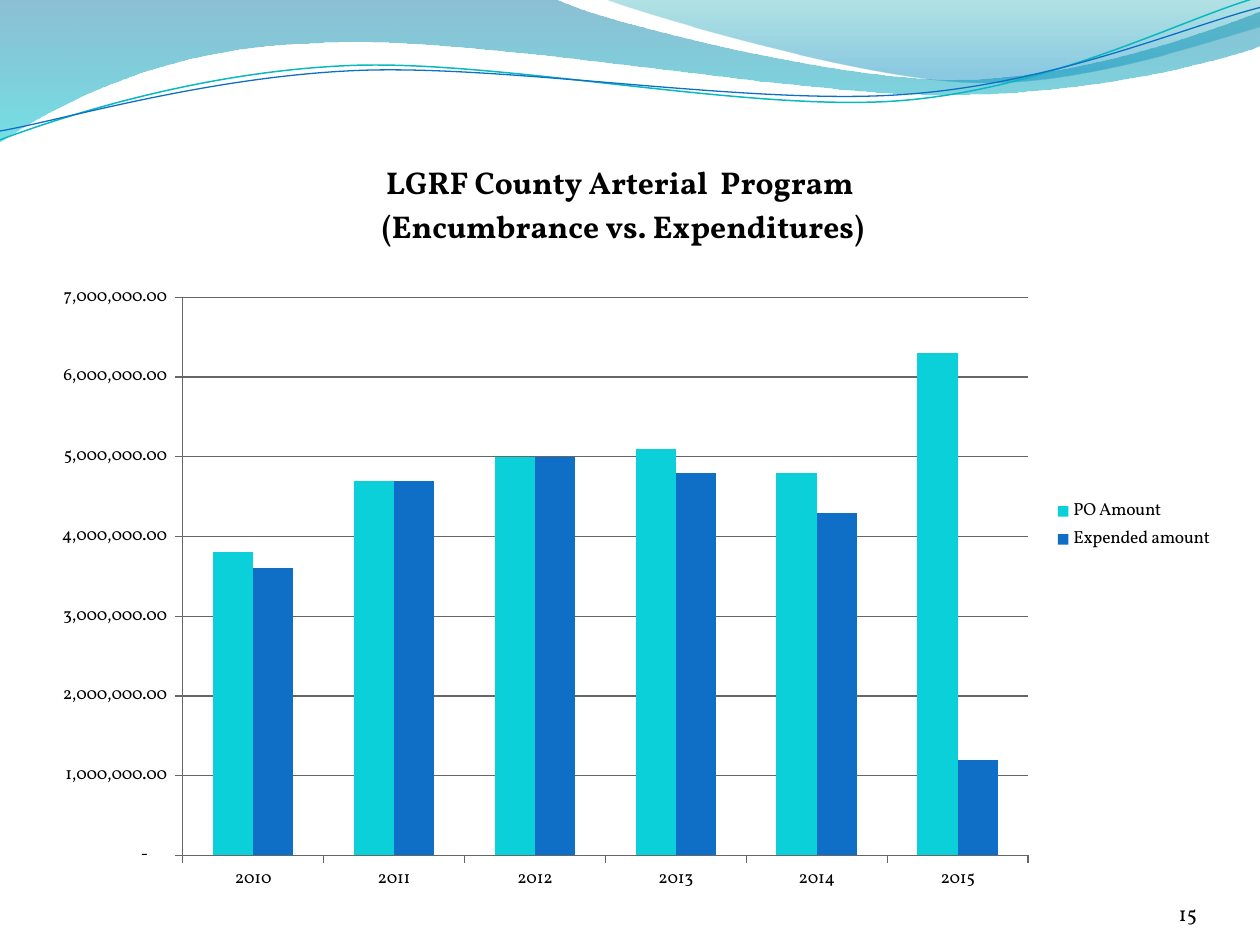
from dataclasses import dataclass
from math import cos, radians, sin

from lxml.etree import SubElement
from pptx import Presentation
from pptx.chart.data import CategoryChartData
from pptx.dml.color import RGBColor
from pptx.enum.chart import XL_CHART_TYPE, XL_LEGEND_POSITION, XL_TICK_MARK
from pptx.enum.text import MSO_ANCHOR, PP_ALIGN
from pptx.oxml import parse_xml
from pptx.oxml.ns import nsdecls, qn
from pptx.util import Cm, Pt

Point = tuple[float, float]
CM_PER_INCH = 2.54


@dataclass(frozen=True)
class Theme:
    font: str = "Vollkorn"
    ink: str = "000000"
    axis: str = "666666"
    aqua: str = "0BD0D9"
    blue: str = "0F6FC6"
    teal: str = "0AB8BF"
    label_size: float = 10
    number_size: float = 12
    title_size: float = 18


@dataclass(frozen=True)
class GradientStop:
    position: float
    color: str
    opacity: int


@dataclass(frozen=True)
class Ribbon:
    start: Point
    segments: tuple[tuple[Point, ...], ...]
    stops: tuple[GradientStop, ...]


@dataclass(frozen=True)
class Strand:
    start: Point
    segments: tuple[tuple[Point, ...], ...]
    center: Point
    color: str
    width: float
    tilt: float = -2.7


@dataclass(frozen=True)
class Region:
    x: float
    y: float
    w: float = 0
    h: float = 0


THEME = Theme()
RIBBONS = (
    Ribbon(
        (0, 0),
        (
            ((4.4, -0.01),),
            ((4.76, 0.17), (6.64, 0.63), (7.58, 0.63)),
            ((8.53, 0.63), (9.58, 0.26), (10, 0.09)),
            ((10.01, 0.36),),
            ((9.83, 0.44), (8.7, 0.76), (7.46, 0.75)),
            ((6.22, 0.75), (3.82, 0.28), (2.57, 0.34)),
            ((1.29, 0.36), (0.46, 0.83), (-0.01, 1.13)),
        ),
        (GradientStop(0, "0074A1", 45), GradientStop(1, "00C6CF", 55)),
    ),
    Ribbon(
        (4.79, -0.01),
        (
            ((5.09, 0.11), (6.82, 0.62), (7.69, 0.65)),
            ((8.56, 0.69), (9.61, 0.32), (10, 0.21)),
            ((10, 0),),
        ),
        (GradientStop(0, "00A1A9", 30), GradientStop(0.8, "008BBF", 45)),
    ),
)
STRANDS = (
    Strand(
        (0, 1.11),
        (
            ((0.48, 0.93), (1.58, 0.57), (2.77, 0.52)),
            ((3.95, 0.47), (5.93, 0.89), (7.13, 0.8)),
            ((8.33, 0.71), (9.38, 0.15), (9.98, -0.02)),
        ),
        (4.99, 0.57),
        THEME.teal,
        0.85,
    ),
    Strand(
        (0, 1.04),
        (
            ((0.47, 0.96), (1.64, 0.61), (2.83, 0.56)),
            ((4.03, 0.51), (5.97, 0.84), (7.17, 0.75)),
            ((8.36, 0.67), (9.41, 0.21), (10, 0.06)),
        ),
        (5, 0.59),
        THEME.blue,
        0.75,
    ),
)
CHART_AREA = Region(0.27, 1.17, 9.45, 6.03)
YEARS = ("2010", "2011", "2012", "2013", "2014", "2015")
AMOUNTS = {
    "PO Amount": (3800000, 4700000, 5000000, 5100000, 4800000, 6300000),
    "Expended amount": (3600000, 4700000, 5000000, 4800000, 4300000, 1200000),
}
AMOUNT_FORMAT = '_(* #,##0.00_);_(* \\(#,##0.00\\);_(* "-"??_);_(@_)'


def inch_cm(value: float) -> Cm:
    return Cm(value * CM_PER_INCH)


def turn(point: Point, center: Point, degrees: float) -> Point:
    angle = radians(degrees)
    dx, dy = point[0] - center[0], point[1] - center[1]
    return (
        center[0] + dx * cos(angle) - dy * sin(angle),
        center[1] + dx * sin(angle) + dy * cos(angle),
    )


def draw_curve(shapes, start: Point, segments, close: bool):
    points = [tuple(map(inch_cm, point)) for segment in segments for point in segment]
    builder = shapes.build_freeform(*map(inch_cm, start))
    builder.add_line_segments(points, close=close)
    curve = builder.convert_to_shape()
    curve.shadow.inherit = False
    steps = iter(list(curve._element.iter(qn("a:lnTo"))))
    for segment in segments:
        group = [next(steps) for _ in segment]
        if len(group) == 3:
            group[0].tag = qn("a:cubicBezTo")
            for step in group[1:]:
                group[0].append(step[0])
                step.getparent().remove(step)
    return curve


def draw_ribbon(slide, ribbon: Ribbon) -> None:
    band = draw_curve(slide.shapes, ribbon.start, ribbon.segments, close=True)
    band.line.fill.background()
    band.fill.gradient()
    band.fill.gradient_angle = 270
    for target, stop in zip(band.fill.gradient_stops, ribbon.stops):
        target.position = stop.position
        target.color.rgb = RGBColor.from_string(stop.color)
    for color, stop in zip(band._element.spPr.iter(qn("a:srgbClr")), ribbon.stops):
        SubElement(color, qn("a:alpha"), val=str(stop.opacity * 1000))


def draw_strand(group, strand: Strand) -> None:
    def level(point: Point) -> Point:
        return turn(point, strand.center, -strand.tilt)

    segments = [tuple(map(level, segment)) for segment in strand.segments]
    thread = draw_curve(group.shapes, level(strand.start), segments, close=False)
    thread.rotation = strand.tilt
    thread.fill.background()
    thread.line.color.rgb = RGBColor.from_string(strand.color)
    thread.line.width = Pt(strand.width)


def style_font(font, size: float, bold: bool = False) -> None:
    font.name = THEME.font
    font.size = Pt(size)
    font.bold = bold
    font.color.rgb = RGBColor.from_string(THEME.ink)


def place(element, region: Region, inner: bool = False) -> None:
    for old in element.findall(qn("c:layout")):
        element.remove(old)
    settings = {"layoutTarget": "inner"} if inner else {}
    settings |= {"xMode": "edge", "yMode": "edge"}
    settings["x"] = (region.x - CHART_AREA.x) / CHART_AREA.w
    settings["y"] = (region.y - CHART_AREA.y) / CHART_AREA.h
    if region.w:
        settings |= {"w": region.w / CHART_AREA.w, "h": region.h / CHART_AREA.h}
    body = "".join(f'<c:{name} val="{value}"/>' for name, value in settings.items())
    layout = parse_xml(
        f'<c:layout {nsdecls("c")}><c:manualLayout>{body}</c:manualLayout></c:layout>'
    )
    leading = ("c:tx", "c:legendPos")
    element.insert(sum(len(element.findall(qn(tag))) for tag in leading), layout)


def style_line(line) -> None:
    line.color.rgb = RGBColor.from_string(THEME.axis)
    line.width = Pt(0.75)


def draw_chart(slide) -> None:
    data = CategoryChartData(number_format=AMOUNT_FORMAT)
    data.categories = YEARS
    for name, values in AMOUNTS.items():
        data.add_series(name, values)
    area = map(inch_cm, (CHART_AREA.x, CHART_AREA.y, CHART_AREA.w, CHART_AREA.h))
    chart = slide.shapes.add_chart(XL_CHART_TYPE.COLUMN_CLUSTERED, *area, data).chart
    style_font(chart.font, THEME.label_size)

    heading = chart.chart_title
    heading.text_frame.text = "LGRF County Arterial  Program \n(Encumbrance vs. Expenditures)"
    for paragraph in heading.text_frame.paragraphs:
        style_font(paragraph.runs[0].font, THEME.title_size, bold=True)
    heading.include_in_layout = False
    place(heading._element, Region(3, 1.25))

    columns = chart.plots[0]
    columns.gap_width = 150
    columns.overlap = 0
    columns.vary_by_categories = False
    for series, color in zip(columns.series, (THEME.aqua, THEME.blue)):
        series.format.fill.solid()
        series.format.fill.fore_color.rgb = RGBColor.from_string(color)
    place(chart._chartSpace.chart.plotArea, Region(1.45, 2.36, 6.71, 4.43), inner=True)

    for axis in (chart.category_axis, chart.value_axis):
        axis.major_tick_mark = XL_TICK_MARK.OUTSIDE
        axis.minor_tick_mark = XL_TICK_MARK.NONE
        style_line(axis.format.line)
    amounts = chart.value_axis
    amounts.minimum_scale, amounts.maximum_scale, amounts.major_unit = 0, 7000000, 1000000
    amounts.tick_labels.number_format = AMOUNT_FORMAT
    amounts.tick_labels.number_format_is_linked = False
    style_line(amounts.major_gridlines.format.line)

    chart.has_legend = True
    chart.legend.position = XL_LEGEND_POSITION.RIGHT
    chart.legend.include_in_layout = False
    place(chart.legend._element, Region(8.29, 3.93, 1.42, 0.48))


def draw_page_number(slide) -> None:
    frame = slide.shapes.add_textbox(Cm(22.02), Cm(17.65), Cm(2.11), Cm(1.02)).text_frame
    frame.word_wrap = True
    frame.vertical_anchor = MSO_ANCHOR.BOTTOM
    frame.margin_left = frame.margin_right = frame.margin_top = frame.margin_bottom = 0
    frame.text = "15"
    frame.paragraphs[0].alignment = PP_ALIGN.RIGHT
    style_font(frame.paragraphs[0].runs[0].font, THEME.number_size)


def main() -> None:
    deck = Presentation()
    deck.slide_width, deck.slide_height = Cm(25.4), Cm(19.05)
    slide = deck.slides.add_slide(deck.slide_layouts[6])
    for ribbon in RIBBONS:
        draw_ribbon(slide, ribbon)
    strands = slide.shapes.add_group_shape()
    for strand in STRANDS:
        draw_strand(strands, strand)
    draw_page_number(slide)
    draw_chart(slide)
    deck.save("out.pptx")


if __name__ == "__main__":
    main()
